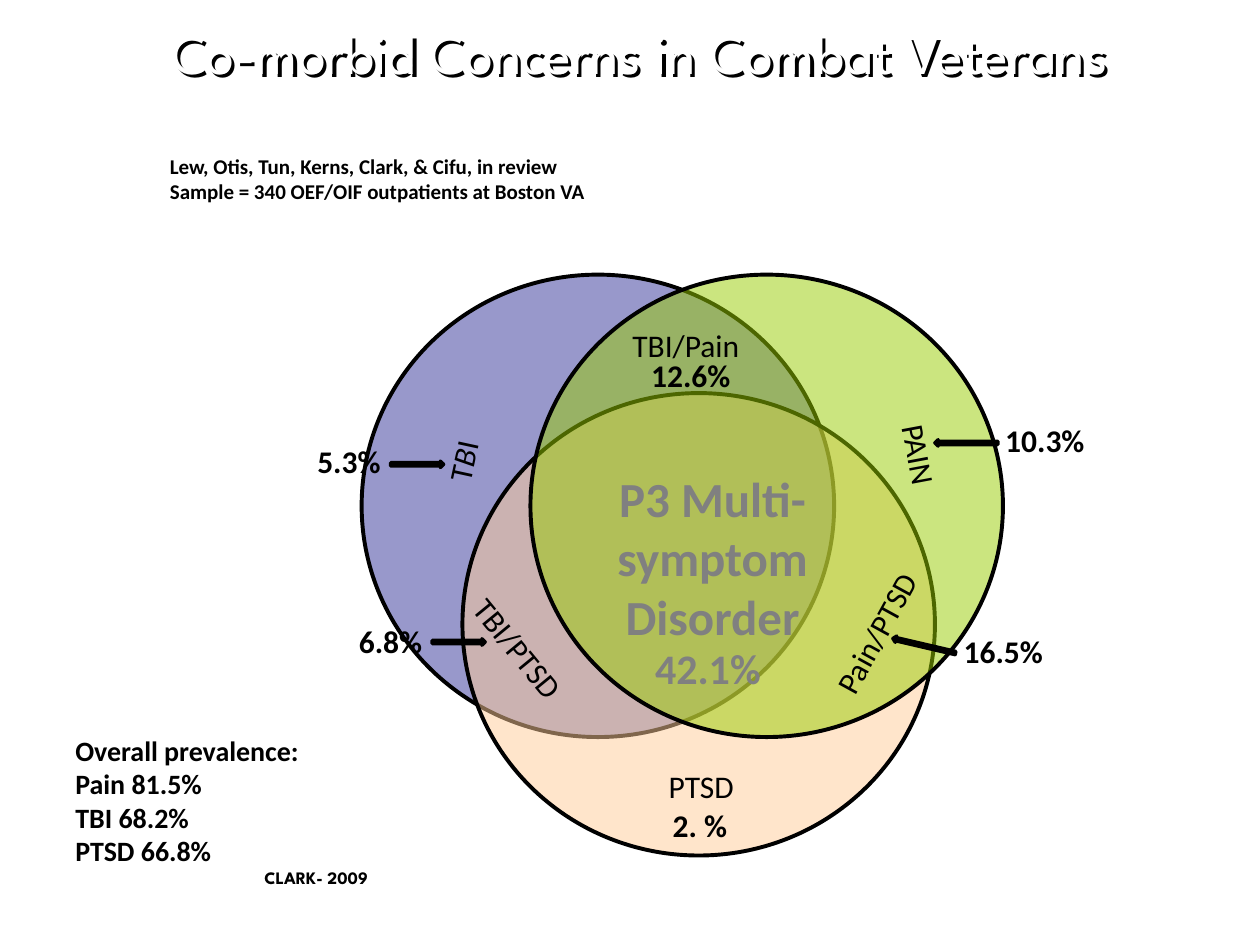
from dataclasses import dataclass

from lxml import etree
from pptx import Presentation
from pptx.dml.color import RGBColor
from pptx.enum.shapes import MSO_SHAPE
from pptx.enum.text import MSO_ANCHOR, MSO_AUTO_SIZE, PP_ALIGN
from pptx.oxml.ns import qn
from pptx.util import Inches, Pt

OVAL, RIGHT_ARROW = MSO_SHAPE.OVAL, MSO_SHAPE.RIGHT_ARROW
LEFT, CENTER = PP_ALIGN.LEFT, PP_ALIGN.CENTER
MIDDLE, NO_AUTOFIT = MSO_ANCHOR.MIDDLE, MSO_AUTO_SIZE.NONE

BLACK = RGBColor(0x00, 0x00, 0x00)
WHITE = RGBColor(0xFF, 0xFF, 0xFF)
GRAY = RGBColor(0x80, 0x80, 0x80)
INDIGO = RGBColor(0x33, 0x33, 0x99)
PEACH = RGBColor(0xFF, 0xCC, 0x99)
LIME = RGBColor(0x99, 0xCC, 0x00)

BODY_FONT = "Calibri"
DISPLAY_FONT = "League Spartan"
CIRCLE_WIDTH, CIRCLE_HEIGHT = 3.75, 3.67
ARROW_HEIGHT = 0.05
LABEL_HEIGHT = 0.4


@dataclass
class Circle:
    left: float
    top: float
    color: RGBColor


@dataclass
class Label:
    """Text block; each line is a tuple of runs, or one plain string."""
    lines: tuple
    left: float
    top: float
    width: float
    height: float = LABEL_HEIGHT
    size: int = 18
    bold: bool = False
    color: RGBColor = BLACK
    font: str = BODY_FONT
    align: PP_ALIGN = LEFT
    wrap: bool = False
    rotation: float = 0
    italic_run: int = -1


@dataclass
class Arrow:
    left: float
    top: float
    width: float
    rotation: float = 0


CIRCLES = (
    Circle(2.87, 2.18, INDIGO),
    Circle(3.67, 3.12, PEACH),
    Circle(4.21, 2.18, LIME),
)

PREVALENCE = Label(
    ("Overall prevalence:", "Pain 81.5%", "TBI 68.2%", "PTSD 66.8%"),
    0.5, 5.77, 2.06, 1.18, size=16, bold=True)

REGION_LABELS = (
    Label(("PTSD",), 4.69, 6.04, 1.75, align=CENTER, wrap=True),
    Label((("T", "B", "I"),), 3.4, 3.44, 0.55, rotation=282.2, italic_run=1),
    Label(("PAIN",), 6.94, 3.43, 0.72, rotation=79.4),
    Label(("TBI/Pain",), 4.92, 2.54, 1.08),
    Label(("TBI/PTSD",), 3.53, 4.98, 1.22, rotation=50.7),
    Label(("Pain/PTSD",), 6.31, 4.79, 1.32, rotation=298.8),
    Label(("P3 Multi-symptom", "Disorder"), 4.21, 3.67, 2.89, 1.51,
          size=28, bold=True, color=GRAY, align=CENTER, wrap=True),
)

STUDY = Label(
    ("Lew, Otis, Tun, Kerns, Clark, & Cifu, in review",
     "Sample = 340 OEF/OIF outpatients at Boston VA"),
    1.25, 1.17, 3.66, 0.5, size=12, bold=True)

PERCENTAGES = (
    Label(("42.1%",), 5.1, 5.05, 1.09, 0.51, size=24, bold=True, color=GRAY),
    Label(("5.3%",), 2.42, 3.46, 0.74, bold=True),
    Label(("2. %",), 5.24, 6.35, 0.66, bold=True),
    Label(("16.5%",), 7.55, 4.97, 0.87, bold=True),
    Label(("10.3%",), 7.88, 3.29, 0.86, bold=True),
    Label(("12.6%",), 5.07, 2.78, 0.87, bold=True),
    Label(("6.8%",), 2.75, 4.89, 0.76, bold=True),
)

ARROWS = (
    Arrow(3.43, 5.07, 0.42),
    Arrow(3.1, 3.66, 0.42),
    Arrow(7.08, 5.1, 0.51, 193.1),
    Arrow(7.42, 3.49, 0.5, 180),
)

CREDIT = Label(("CLARK- 2009",), 2, 6.83, 2.08, 0.5, size=10, bold=True,
               font=DISPLAY_FONT, wrap=True)


def style_font(font, name: str, size: int, color: RGBColor, bold: bool) -> None:
    font.name, font.size, font.bold = name, Pt(size), bold
    font.color.rgb = color


def add_title(slide, text: str) -> None:
    title = slide.shapes.title
    title.left, title.top = Inches(0.58), Inches(0)
    title.width, title.height = Inches(9), Inches(0.83)
    frame = title.text_frame
    frame.text = text
    frame.auto_size = NO_AUTOFIT
    frame.vertical_anchor = MIDDLE
    paragraph = frame.paragraphs[0]
    paragraph.alignment = CENTER
    style_font(paragraph.font, DISPLAY_FONT, 32, WHITE, False)

    # An unfilled shape casts the shadow of its letters, which makes them readable.
    title.fill.background()
    title.shadow.inherit = False
    effects = title._element.spPr.find(qn("a:effectLst"))
    shadow = etree.SubElement(effects, qn("a:outerShdw"), dist=str(Pt(2.5)),
                              dir="2700000", algn="ctr", rotWithShape="0")
    etree.SubElement(shadow, qn("a:srgbClr"), val=str(BLACK))


def add_label(slide, label: Label) -> None:
    box = slide.shapes.add_textbox(Inches(label.left), Inches(label.top),
                                   Inches(label.width), Inches(label.height))
    box.rotation = label.rotation
    frame = box.text_frame
    frame.word_wrap = label.wrap
    for index, line in enumerate(label.lines):
        paragraph = frame.add_paragraph() if index else frame.paragraphs[0]
        paragraph.alignment = label.align
        style_font(paragraph.font, label.font, label.size, label.color, label.bold)
        runs = (line,) if isinstance(line, str) else line
        for position, text in enumerate(runs):
            run = paragraph.add_run()
            run.text = text
            if position == label.italic_run:
                run.font.italic = True


def add_filled_shape(slide, kind: MSO_SHAPE, left: float, top: float,
                     width: float, height: float, color: RGBColor,
                     line_width: float):
    shape = slide.shapes.add_shape(kind, Inches(left), Inches(top),
                                   Inches(width), Inches(height))
    shape.shadow.inherit = False
    shape.fill.solid()
    shape.fill.fore_color.rgb = color
    shape.line.color.rgb = BLACK
    shape.line.width = Pt(line_width)
    return shape


def add_circle(slide, circle: Circle) -> None:
    """Draw a half-transparent circle of the Venn diagram."""
    shape = add_filled_shape(slide, OVAL, circle.left, circle.top,
                             CIRCLE_WIDTH, CIRCLE_HEIGHT, circle.color, 2.25)
    fill_color = shape._element.spPr.find(qn("a:solidFill")).find(qn("a:srgbClr"))
    etree.SubElement(fill_color, qn("a:alpha"), val="50000")


def add_arrow(slide, arrow: Arrow) -> None:
    shape = add_filled_shape(slide, RIGHT_ARROW, arrow.left, arrow.top,
                             arrow.width, ARROW_HEIGHT, BLACK, 2)
    shape.rotation = arrow.rotation


def main() -> None:
    presentation = Presentation()
    presentation.slide_width, presentation.slide_height = Inches(10), Inches(7.5)
    slide = presentation.slides.add_slide(presentation.slide_layouts[5])

    add_title(slide, "Co-morbid Concerns in Combat Veterans")
    add_label(slide, PREVALENCE)
    for circle in CIRCLES:
        add_circle(slide, circle)
    for label in (*REGION_LABELS, STUDY, *PERCENTAGES):
        add_label(slide, label)
    for arrow in ARROWS:
        add_arrow(slide, arrow)
    add_label(slide, CREDIT)

    presentation.save("out.pptx")


if __name__ == "__main__":
    main()
